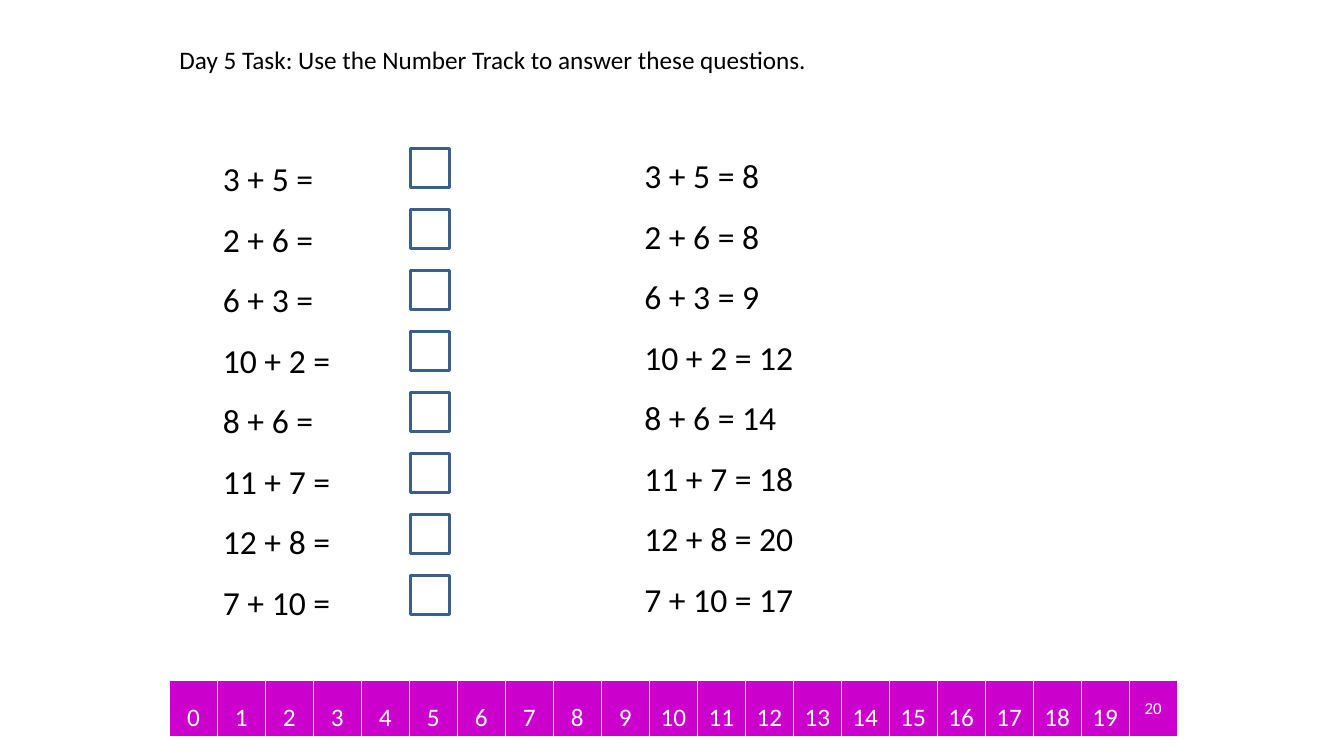
from lxml import etree
from pptx import Presentation
from pptx import util as u
from pptx.dml.color import RGBColor
from pptx.enum import shapes, text
from pptx.oxml.ns import qn

# Content
TITLE = "Day 5 Task: Use the Number Track to answer these questions."
SUMS = [(3, 5), (2, 6), (6, 3), (10, 2), (8, 6), (11, 7), (12, 8), (7, 10)]
QUESTIONS = [f"{a} + {b} =" for a, b in SUMS]
ANSWERS = [f"{a} + {b} = {a + b}" for a, b in SUMS]
TRACK = range(21)

# Style
FONT = "Calibri"
BLACK = RGBColor(0x00, 0x00, 0x00)
WHITE = RGBColor(0xFF, 0xFF, 0xFF)
MAGENTA = RGBColor(0xCC, 0x00, 0xCC)
BLUE = RGBColor(0x3A, 0x5F, 0x8C)
BORDERS = {"a:lnL": 1, "a:lnR": 1, "a:lnT": 1, "a:lnB": 3}

# Layout in inches
LEFT = 1.68
TRACK_TOP, TRACK_W, TRACK_H = 6.75, 10, 0.57
BOX_LEFT, BOX_TOP, BOX_SIZE = 4.07, 1.47, 0.39
BOX_PITCH = 4.24 / (len(SUMS) - 1)


def write(tf, lines, size=24, color=BLACK, align=text.PP_ALIGN.LEFT, spacing=1.0):
    for i, line in enumerate(lines):
        p = tf.paragraphs[0] if i == 0 else tf.add_paragraph()
        p.alignment, p.line_spacing = align, spacing
        p.space_before = p.space_after = u.Pt(0)
        r = p.add_run()
        r.text = line
        r.font.name, r.font.size, r.font.bold = FONT, u.Pt(size), False
        r.font.color.rgb = color


def place(sp, x, y, w, h):
    sp.left, sp.top, sp.width, sp.height = map(u.Inches, (x, y, w, h))
    tf = sp.text_frame
    tf.word_wrap = True
    tf.auto_size = text.MSO_AUTO_SIZE.NONE
    tf.vertical_anchor = text.MSO_ANCHOR.TOP
    return tf


def remove_bullets(tf):
    for p in tf.paragraphs:
        ppr = p._p.get_or_add_pPr()
        ppr.set("marL", "0")
        ppr.set("indent", "0")
        etree.SubElement(ppr, qn("a:buNone"))


def add_borders(cell):
    tcpr = cell._tc.get_or_add_tcPr()
    for tag, width in BORDERS.items():
        ln = etree.SubElement(tcpr, qn(tag), w=str(u.Pt(width)))
        fill = etree.SubElement(ln, qn("a:solidFill"))
        etree.SubElement(fill, qn("a:srgbClr"), val=str(WHITE))


prs = Presentation()
prs.slide_width, prs.slide_height = u.Inches(13.33), u.Inches(7.5)
s = prs.slides.add_slide(prs.slide_layouts[3])
title, questions, answers = s.placeholders

# Title
write(place(title, LEFT, 0.39, 10.42, 0.4), [TITLE], size=18)

# Questions and answers
for sp, lines, at in ((questions, QUESTIONS, (2.11, 1.32, 2.44, 5.35)),
                      (answers, ANSWERS, (6.29, 1.29, 3.62, 5.35))):
    tf = place(sp, *at)
    write(tf, lines, spacing=1.5)
    remove_bullets(tf)

# Answer boxes
for i in range(len(SUMS)):
    box = s.shapes.add_shape(
        shapes.MSO_SHAPE.RECTANGLE, u.Inches(BOX_LEFT),
        u.Inches(BOX_TOP + i * BOX_PITCH), u.Inches(BOX_SIZE), u.Inches(BOX_SIZE))
    box.shadow.inherit = False
    box.fill.background()
    box.line.color.rgb = BLUE
    box.line.width = u.Pt(2)

# Number track
table = s.shapes.add_table(1, len(TRACK), u.Inches(LEFT), u.Inches(TRACK_TOP),
                           u.Inches(TRACK_W), u.Inches(TRACK_H)).table
table.first_row = table.horz_banding = False
for n in TRACK:
    last = n == TRACK[-1]
    table.columns[n].width = u.Inches(TRACK_W / len(TRACK))
    cell = table.cell(0, n)
    add_borders(cell)
    cell.fill.solid()
    cell.fill.fore_color.rgb = MAGENTA
    cell.vertical_anchor = text.MSO_ANCHOR.MIDDLE if last else text.MSO_ANCHOR.BOTTOM
    write(cell.text_frame, [str(n)], size=12 if last else 18, color=WHITE,
          align=text.PP_ALIGN.CENTER)

prs.save("out.pptx")
